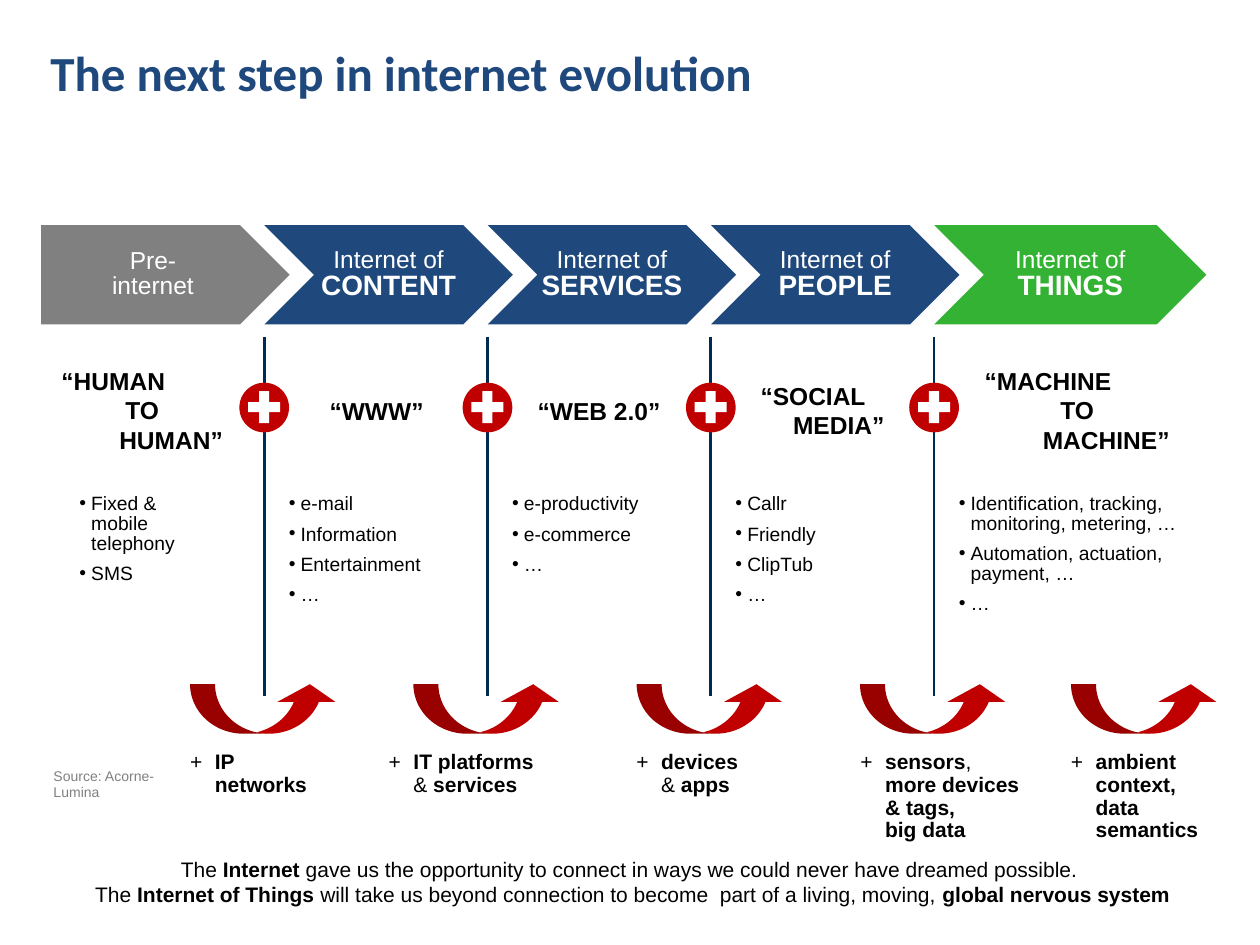
from copy import deepcopy
from itertools import cycle

from lxml.etree import SubElement
from pptx import Presentation
from pptx.dml.color import RGBColor
from pptx.enum.shapes import MSO_CONNECTOR, MSO_SHAPE
from pptx.enum.text import MSO_ANCHOR, MSO_AUTO_SIZE, PP_ALIGN
from pptx.oxml.ns import qn
from pptx.util import Pt

NAVY = RGBColor(0x1F, 0x49, 0x7D)
DARK = RGBColor(0x00, 0x2A, 0x50)
GRAY = RGBColor(0x80, 0x80, 0x80)
GREEN = RGBColor(0x34, 0xB2, 0x33)
RED = RGBColor(0xC0, 0x00, 0x00)
WHITE = RGBColor(0xFF, 0xFF, 0xFF)
BLACK = RGBColor(0x00, 0x00, 0x00)

LEFT, CENTER, RIGHT = PP_ALIGN.LEFT, PP_ALIGN.CENTER, PP_ALIGN.RIGHT
STAIRS = {1: [CENTER], 2: [LEFT, RIGHT], 3: [LEFT, CENTER, RIGHT]}

PITCH = 127.6
COLUMNS = [151 + PITCH * i for i in range(4)]
STAGE_W = 142

STAGES = [
    ("Pre-\vinternet", GRAY, STAGE_W),
    ("Internet of\v*CONTENT*", NAVY, STAGE_W),
    ("Internet of\v*SERVICES*", NAVY, STAGE_W),
    ("Internet of\v*PEOPLE*", NAVY, STAGE_W),
    ("Internet of\v*THINGS*", GREEN, 155.5),
]
QUOTES = [
    ("*“HUMAN*\n*TO*\n*HUMAN”*", 28, 205, 106.5, 58.5),
    ("*“WWW”*", 165.5, 222.5, 99.5, 24.5),
    ("*“WEB 2.0”*", 278.6, 222.5, 127.5, 24.5),
    ("*“SOCIAL*\n*MEDIA”*", 427.5, 214, 85, 41),
    ("*“MACHINE*\n*TO*\n*MACHINE”*", 555.5, 205, 120, 58.5),
]
EXAMPLES = [
    ("Fixed &\vmobile\vtelephony\nSMS", 38.3, 98.5),
    ("e-mail\nInformation\nEntertainment\n…", COLUMNS[0] + 7, 113),
    ("e-productivity\ne-commerce\n…", COLUMNS[1] + 7, 113),
    ("Callr\nFriendly\nClipTub\n…", COLUMNS[2] + 7, 113),
    ("Identification, tracking, monitoring, metering, …\n"
     "Automation, actuation, payment, …\n…", COLUMNS[3] + 7, 175.5),
]
ADDITIONS = [
    ("+ \t*IP\vnetworks*", 101.5, 82),
    ("+ \t*IT platforms\v*&* services*", 215, 100),
    ("+ \t*devices \v*& *apps*", 356.5, 77),
    ("+ \t*sensors*,\n*\tmore devices\v& tags,\vbig data*", 484.5, 106),
    ("+ \t*ambient*\n*\tcontext,*\n*\tdata \vsemantics*", 604.8, 88),
]
CLOSING = (
    "The *Internet *gave us the opportunity to connect in ways "
    "we could never have dreamed possible. \n"
    "The *Internet of Things *will take us beyond connection to become  part of "
    "a living, moving, *global nervous system*"
)


def write(tf, text, size, color=BLACK, aligns=(LEFT,), spacing=None, bold_size=None):
    for i, (line, align) in enumerate(zip(text.split("\n"), cycle(aligns))):
        p = tf.add_paragraph() if i else tf.paragraphs[0]
        p.alignment = align
        p.line_spacing = spacing
        for j, part in enumerate(line.split("*")):
            for k, words in enumerate(part.split("\v")):
                if k:
                    p.add_line_break()
                if words:
                    r = p.add_run()
                    r.text = words
                    r.font.name = "Arial"
                    r.font.bold = j % 2 == 1
                    r.font.size = Pt(bold_size if bold_size and j % 2 else size)
                    r.font.color.rgb = color
        for br in p._p.findall(qn("a:br")):
            br.append(deepcopy(p.runs[0]._r.rPr))


def hang(p, indent, bullet=None):
    pPr = p._p.get_or_add_pPr()
    pPr.set("marL", str(Pt(indent)))
    pPr.set("indent", str(-Pt(indent)))
    if bullet:
        SubElement(pPr, qn("a:buFont")).set("typeface", "Arial")
        SubElement(pPr, qn("a:buChar")).set("char", bullet)


def add_text(s, x, y, w, h, anchor=MSO_ANCHOR.TOP, wrap=True):
    tf = s.shapes.add_textbox(Pt(x), Pt(y), Pt(w), Pt(h)).text_frame
    tf.word_wrap = wrap
    tf.vertical_anchor = anchor
    return tf


def add_block(shapes, kind, x, y, w, h, color, adjustments=()):
    sp = shapes.add_shape(kind, Pt(x), Pt(y), Pt(w), Pt(h))
    sp.shadow.inherit = False
    sp.fill.solid()
    sp.fill.fore_color.rgb = color
    sp.line.fill.background()
    for i, value in enumerate(adjustments):
        sp.adjustments[i] = value
    return sp


def add_title(s, text):
    sp = s.shapes.title
    sp.left, sp.top, sp.width, sp.height = Pt(21.6), Pt(26), Pt(648), Pt(64)
    tf = sp.text_frame
    tf.text = text
    tf.auto_size = MSO_AUTO_SIZE.NONE
    tf.vertical_anchor = MSO_ANCHOR.TOP
    p = tf.paragraphs[0]
    p.alignment = LEFT
    p.line_spacing = 0.85
    font = p.runs[0].font
    font.name, font.size, font.bold = "Calibri", Pt(28), True
    font.color.rgb = NAVY


def add_stage(s, i, text, color, width):
    kind = MSO_SHAPE.CHEVRON if i else MSO_SHAPE.PENTAGON
    sp = add_block(s.shapes, kind, 23.5 + PITCH * i, 128.7, width, 56.7, color)
    tf = sp.text_frame
    tf.word_wrap = True
    tf.vertical_anchor = MSO_ANCHOR.MIDDLE
    if i:
        tf.margin_left = tf.margin_right = 0
    write(tf, text, 14, WHITE, [CENTER], 0.85, bold_size=16)


def add_separator(s, x):
    c = s.shapes.add_connector(MSO_CONNECTOR.STRAIGHT, Pt(x), Pt(192.5), Pt(x), Pt(398))
    c.line.color.rgb = DARK
    c.line.width = Pt(1.5)
    SubElement(c._element.spPr, qn("a:effectLst"))


def add_plus_badge(s, x):
    shapes = s.shapes.add_group_shape().shapes
    add_block(shapes, MSO_SHAPE.OVAL, x - 14.2, 218.7, 28.4, 28.4, RED)
    add_block(shapes, MSO_SHAPE.CROSS, x - 9.2, 223.5, 18.3, 18.3, WHITE, [0.343])


def add_examples(s, text, x, width):
    tf = add_text(s, x, 279.4, width, 70)
    write(tf, text, 11, spacing=0.85)
    for p in tf.paragraphs:
        p.space_after = Pt(6)
        hang(p, 6.75, "•")


def add_addition(s, text, x, width):
    tf = add_text(s, x, 426, width, 33 if "\n" not in text else 60)
    write(tf, text, 12, spacing=0.9)
    for p in tf.paragraphs:
        hang(p, 14.2)


def main():
    prs = Presentation()
    prs.slide_width, prs.slide_height = Pt(720), Pt(540)
    s = prs.slides.add_slide(prs.slide_layouts[5])
    add_title(s, "The next step in internet evolution")
    write(add_text(s, 23.5, 439.5, 96.5, 17, MSO_ANCHOR.MIDDLE, wrap=False),
          "Source: Acorne-Lumina", 8, GRAY)
    for i, stage in enumerate(STAGES):
        add_stage(s, i, *stage)
    for x in COLUMNS:
        add_separator(s, x)
    for x in [c - 42.4 for c in COLUMNS] + [612]:
        add_block(s.shapes, MSO_SHAPE.CURVED_UP_ARROW, x, 391, 85, 28.3, RED,
                  [0.506, 1.167, 0.356])
    for addition in ADDITIONS:
        add_addition(s, *addition)
    for text, *box in QUOTES:
        write(add_text(s, *box, MSO_ANCHOR.MIDDLE), text, 14,
              aligns=STAIRS[text.count("\n") + 1])
    for example in EXAMPLES:
        add_examples(s, *example)
    for x in COLUMNS:
        add_plus_badge(s, x)
    write(add_text(s, 31.5, 486, 660, 36), CLOSING, 12, aligns=[CENTER])
    prs.save("out.pptx")


if __name__ == "__main__":
    main()
